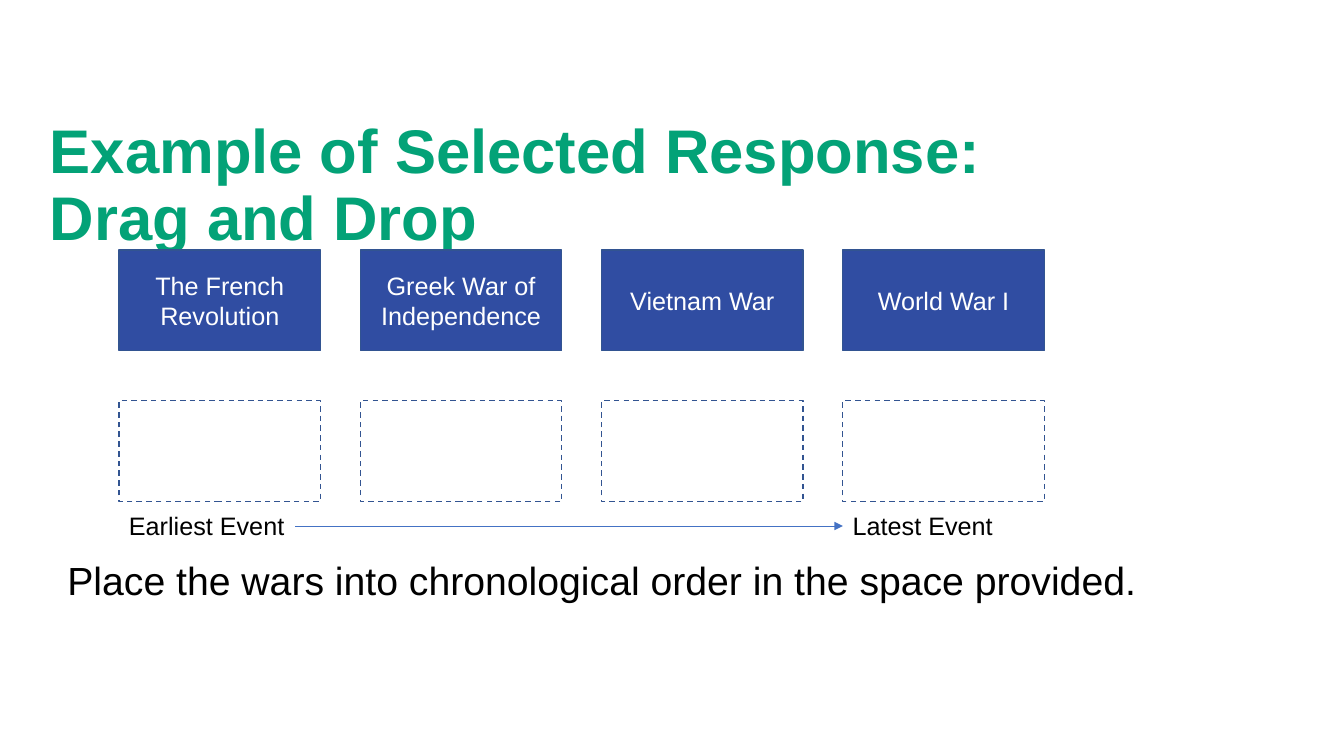
from lxml import etree
from pptx import Presentation
from pptx.dml.color import RGBColor
from pptx.enum.dml import MSO_LINE_DASH_STYLE as Dash
from pptx.enum.shapes import MSO_CONNECTOR as Link, MSO_SHAPE as Shape
from pptx.enum.text import MSO_ANCHOR as Anchor, MSO_AUTO_SIZE as Fit, PP_ALIGN as Align
from pptx.oxml.ns import qn
from pptx.util import Cm, Pt

WARS = ["The French Revolution", "Greek War of Independence", "Vietnam War", "World War I"]
LEFT, STEP, WIDE, HIGH = 3, 6.08, 5.08, 2.54
CARD_TOP, SLOT_TOP, LABEL_TOP = 6.3, 10.1, 12.74


def color(code):
    return RGBColor.from_string(code)


def write(frame, text, size=18, ink="000000", bold=False, align=Align.LEFT,
          anchor=Anchor.TOP, space=1.0, wrap=True, fit=Fit.NONE):
    frame.text = text
    frame.word_wrap = wrap
    frame.auto_size = fit
    frame.vertical_anchor = anchor
    for para in frame.paragraphs:
        para.alignment = align
        para.line_spacing = space
        for run in para.runs:
            font = run.font
            font.name, font.size, font.bold = "Arial", Pt(size), bold
            font.color.rgb = color(ink)


class Page:
    green, blue, edge, arrow = "03A277", "304DA2", "325491", "4472C4"

    def __init__(self, deck):
        self.slide = deck.slides.add_slide(deck.slide_layouts[5])
        self.shapes = self.slide.shapes

    def title(self, text, x, y, w, h):
        head = self.shapes.title
        head.left, head.top, head.width, head.height = Cm(x), Cm(y), Cm(w), Cm(h)
        write(head.text_frame, text, size=44, ink=self.green, bold=True,
              anchor=Anchor.MIDDLE, space=0.9)

    def box(self, x, y, fill, text="", dash=None):
        box = self.shapes.add_shape(Shape.RECTANGLE, Cm(x), Cm(y), Cm(WIDE), Cm(HIGH))
        box.shadow.inherit = False
        box.fill.solid()
        box.fill.fore_color.rgb = color(fill)
        box.line.color.rgb = color(self.edge)
        box.line.width = Pt(1)
        if dash:
            box.line.dash_style = dash
        if text:
            write(box.text_frame, text, ink="FFFFFF", align=Align.CENTER,
                  anchor=Anchor.MIDDLE)

    def label(self, text, x, y, w, h, **style):
        note = self.shapes.add_textbox(Cm(x), Cm(y), Cm(w), Cm(h))
        write(note.text_frame, text, fit=Fit.SHAPE_TO_FIT_TEXT, **style)
        return note

    def pointer(self, x, target):
        y = target.top + target.height // 2
        line = self.shapes.add_connector(Link.STRAIGHT, Cm(x), y, target.left, y)
        line.end_connect(target, 1)
        line.line.color.rgb = color(self.arrow)
        line.line.width = Pt(0.5)
        etree.SubElement(line.line._get_or_add_ln(), qn("a:tailEnd"), type="triangle")
        etree.SubElement(line._element.spPr, qn("a:effectLst"))


def main():
    deck = Presentation()
    deck.slide_width, deck.slide_height = Cm(33.87), Cm(19.05)
    page = Page(deck)

    # Heading
    page.title("Example of Selected Response:\vDrag and Drop", 1, 2.87, 29.2, 3.68)

    # War cards above empty drop slots
    for col, war in enumerate(WARS):
        x = LEFT + col * STEP
        page.box(x, CARD_TOP, page.blue, war)
        page.box(x, SLOT_TOP, "FFFFFF", dash=Dash.DASH)

    # Task and time line
    page.label("Place the wars into chronological order in the space provided.",
               1.45, 13.9, 27.79, 1.45, size=28, wrap=False)
    page.label("Earliest Event", LEFT, LABEL_TOP, WIDE, 1.03)
    last = page.label("Latest Event", LEFT + 3 * STEP, LABEL_TOP, WIDE, 1.03)
    page.pointer(7.44, last)

    deck.save("out.pptx")


if __name__ == "__main__":
    main()
